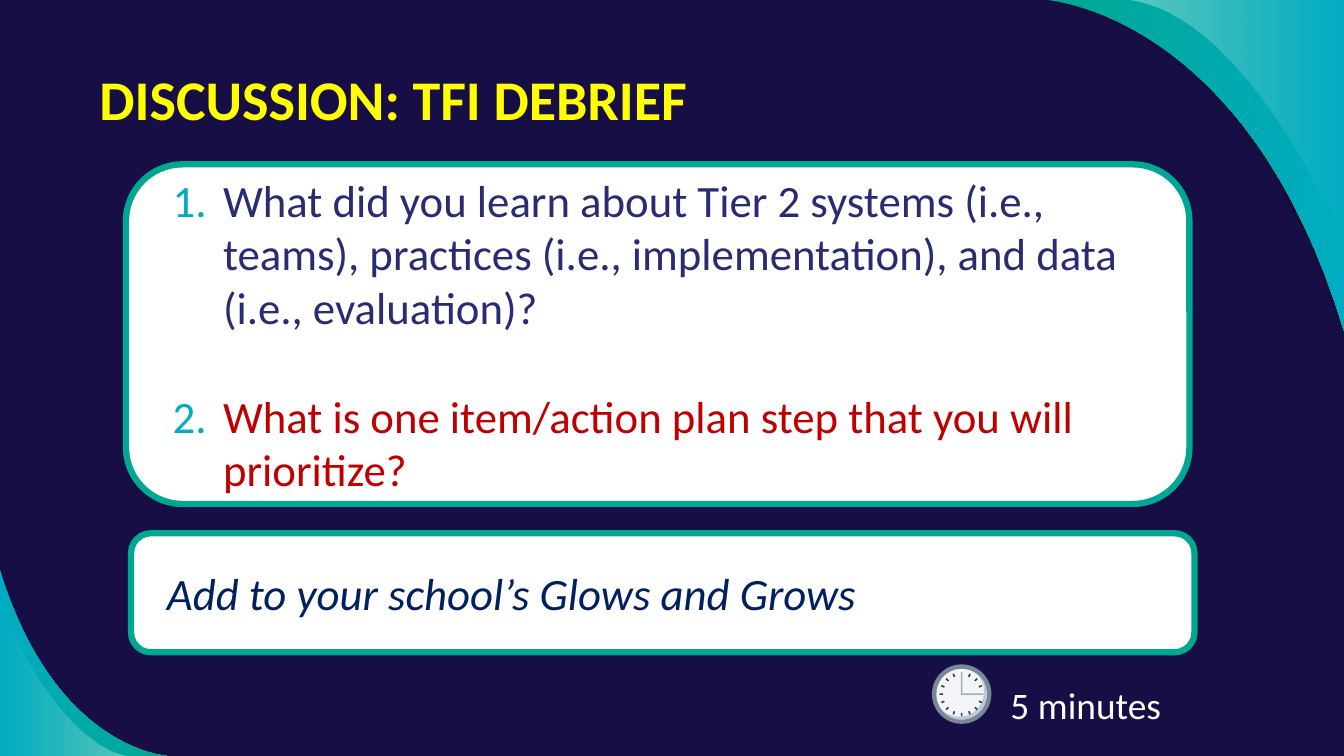
import dataclasses
import math
from typing import Optional

import lxml.etree
import pptx
import pptx.dml.color
import pptx.enum.shapes
import pptx.enum.text
import pptx.oxml
import pptx.oxml.ns
import pptx.util

Pt = pptx.util.Pt
RGBColor = pptx.dml.color.RGBColor
Shapes = pptx.enum.shapes.MSO_SHAPE
Point = tuple[float, float]

NIGHT = RGBColor(0x16, 0x0E, 0x44)
SHADE = RGBColor(0x12, 0x10, 0x2F)
CYAN = RGBColor(0x00, 0xAC, 0xC2)
TEAL = RGBColor(0x00, 0xA7, 0x91)
WHITE = RGBColor(0xFF, 0xFF, 0xFF)
YELLOW = RGBColor(0xFF, 0xFF, 0x00)
INDIGO = RGBColor(0x29, 0x2C, 0x73)
RED = RGBColor(0xC0, 0x00, 0x00)
NAVY = RGBColor(0x00, 0x20, 0x60)
RIM = RGBColor(0x79, 0x88, 0x98)
DIAL = RGBColor(0xF2, 0xF4, 0xF7)
HAND = RGBColor(0xA3, 0xAD, 0xB8)
CRESCENT = RGBColor(0xBC, 0xCA, 0xD6)
TICK = RGBColor(0x3D, 0x3D, 0x3D)

FONT = "Calibri"
WIDTH, HEIGHT = 960, 540
CLOCK_X, CLOCK_Y = 686.9, 495.8
TICK_COUNT, TICK_RADIUS = 16, 14.5


@dataclasses.dataclass
class Stop:
    """A gradient colour with its opacity in percent."""
    color: RGBColor
    opacity: int = 100


@dataclasses.dataclass
class Outline:
    """A closed outline: Bezier curves (two controls, one end), then corners."""
    start: Point
    curves: list[tuple[Point, Point, Point]]
    stops: list[Stop]
    corners: list[Point] = dataclasses.field(default_factory=list)


@dataclasses.dataclass
class Line:
    text: str
    size: float
    color: RGBColor
    bold: bool = False
    italic: bool = False
    numbered: bool = False
    margin: float = 0
    indent: float = 0
    space_after: float = 0
    line_spacing: Optional[float] = None


@dataclasses.dataclass
class Panel:
    left: float
    top: float
    width: float
    height: float
    lines: list[Line]
    inset: Optional[float] = None
    framed: bool = False


FULL_ARC = [Stop(TEAL), Stop(CYAN)]
GLOW_LEFT = [Stop(WHITE, 36), Stop(WHITE, 0)]

CORNERS = [
    Outline((960, 242.6), [((889.2, 7.9), (742.3, 0), (742.3, 0))], [Stop(SHADE, 54)], [(960, 0)]),
    Outline((747.4, 0), [((747.4, 0), (891.4, 7.9), (960, 236.2))], FULL_ARC, [(960, 0)]),
    Outline((960, 175.7), [((960, 175.7), (894.2, 10.8), (805, 0))], GLOW_LEFT, [(960, 0)]),
    Outline((119.5, 540), [((119.5, 540), (38.9, 535.7), (0, 406.8))], FULL_ARC[::-1], [(0, 540)]),
    Outline((0, 432.7), [((0, 432.7), (40.3, 533.5), (95, 540))], GLOW_LEFT[::-1], [(0, 540)]),
]

CLOCK_SHADE = Outline((698.4, 482.4), [
    ((704.9, 489.6), (704.2, 499.7), (697.7, 506.9)),
    ((694.1, 510.5), (689.8, 511.9), (684.7, 511.9)),
    ((681.1, 511.9), (676.8, 510.5), (673.2, 507.6)),
    ((676.8, 511.9), (681.8, 514.1), (686.9, 514.1)),
    ((691.2, 514.1), (696.2, 511.9), (699.8, 508.3)),
    ((707, 501.1), (706.3, 488.9), (698.4, 482.4)),
], [Stop(CRESCENT)])

QUESTIONS = [
    Line("What did you learn about Tier 2 systems (i.e., teams), practices (i.e., implementation), "
         "and data (i.e., evaluation)?", 32, INDIGO,
         numbered=True, margin=50.4, indent=-36, space_after=39),
    Line("What is one item/action plan step that you will prioritize?", 32, RED,
         numbered=True, margin=50.4, indent=-36),
]

PANELS = [
    Panel(64, 36.8, 738.6, 66, [Line("DISCUSSION: TFI DEBRIEF", 40, YELLOW, bold=True)], inset=7.2),
    Panel(690.4, 474.6, 150, 41.8,
          [Line("5 minutes", 26.7, WHITE, margin=22, line_spacing=1.5)], inset=9.4),
    Panel(90, 117.4, 759.6, 242.6, QUESTIONS, framed=True),
    Panel(93.6, 380.9, 759.6, 85,
          [Line("Add to your school’s Glows and Grows", 32, NAVY, italic=True, margin=14.4)],
          framed=True),
]


def add_element(parent, tag: str, **attributes: str):
    return lxml.etree.SubElement(parent, pptx.oxml.ns.qn(tag), attributes)


def add_color(parent, stop: Stop) -> None:
    color = add_element(parent, "a:srgbClr", val=str(stop.color))
    if stop.opacity < 100:
        add_element(color, "a:alpha", val=str(stop.opacity * 1000))


def paint(shape, stops: list[Stop]) -> None:
    """Fill with one colour, or from left to right with several."""
    shape.shadow.inherit = False
    shape.line.fill.background()
    if len(stops) == 1:
        fill = pptx.oxml.parse_xml(f"<a:solidFill {pptx.oxml.ns.nsdecls('a')}/>")
        add_color(fill, stops[0])
    else:
        fill = pptx.oxml.parse_xml(f"<a:gradFill {pptx.oxml.ns.nsdecls('a')}/>")
        stop_list = add_element(fill, "a:gsLst")
        for index, stop in enumerate(stops):
            position = index * 100000 // (len(stops) - 1)
            add_color(add_element(stop_list, "a:gs", pos=str(position)), stop)
        add_element(fill, "a:lin", ang="0", scaled="0")
    shape.line._ln.addprevious(fill)


def curve_points(start: Point, curve: tuple[Point, Point, Point], steps: int = 32) -> list[Point]:
    points = (start, *curve)
    result = []
    for step in range(1, steps + 1):
        t = step / steps
        weights = [math.comb(3, k) * t ** k * (1 - t) ** (3 - k) for k in range(4)]
        result.append((sum(w * p[0] for w, p in zip(weights, points)),
                       sum(w * p[1] for w, p in zip(weights, points))))
    return result


def draw_outline(page, outline: Outline) -> None:
    points = [outline.start]
    for curve in outline.curves:
        points += curve_points(points[-1], curve)
    points = [(Pt(x), Pt(y)) for x, y in points + outline.corners]
    builder = page.shapes.build_freeform(*points[0])
    builder.add_line_segments(points[1:], close=True)
    paint(builder.convert_to_shape(), outline.stops)


def draw_centred(page, kind, x: float, y: float, width: float, height: float,
                 color: RGBColor, angle: float = 0) -> None:
    shape = page.shapes.add_shape(kind, Pt(x - width / 2), Pt(y - height / 2), Pt(width), Pt(height))
    shape.rotation = angle
    paint(shape, [Stop(color)])


def draw_clock(page) -> None:
    for diameter, color in ((42.5, RIM), (36, DIAL)):
        draw_centred(page, Shapes.OVAL, CLOCK_X, CLOCK_Y, diameter, diameter, color)
    draw_centred(page, Shapes.ROUNDED_RECTANGLE, CLOCK_X, CLOCK_Y - 7.6, 1.2, 16, HAND)
    draw_centred(page, Shapes.ROUNDED_RECTANGLE, CLOCK_X + 7.6, CLOCK_Y, 16, 1.2, HAND)
    draw_outline(page, CLOCK_SHADE)
    # The hands cover the marks at twelve and three
    for index in range(TICK_COUNT):
        if index not in (0, TICK_COUNT // 4):
            angle = index * 360 / TICK_COUNT
            x = CLOCK_X + TICK_RADIUS * math.sin(math.radians(angle))
            y = CLOCK_Y - TICK_RADIUS * math.cos(math.radians(angle))
            draw_centred(page, Shapes.ROUNDED_RECTANGLE, x, y, 1.2, 2.4, TICK, angle)


def write_line(para, line: Line) -> None:
    para.text = line.text
    para.alignment = pptx.enum.text.PP_ALIGN.LEFT
    para.space_after = Pt(line.space_after)
    if line.line_spacing:
        para.line_spacing = line.line_spacing
    properties = para._p.get_or_add_pPr()
    properties.set("marL", str(Pt(line.margin)))
    properties.set("indent", str(Pt(line.indent)))
    if line.numbered:
        add_color(add_element(properties, "a:buClr"), Stop(CYAN))
        add_element(properties, "a:buFont", typeface=FONT)
        add_element(properties, "a:buAutoNum", type="arabicPeriod")
    font = para.font
    font.name, font.size, font.color.rgb = FONT, Pt(line.size), line.color
    font.bold, font.italic = line.bold, line.italic


def draw_panel(page, panel: Panel) -> None:
    place = Pt(panel.left), Pt(panel.top), Pt(panel.width), Pt(panel.height)
    if panel.framed:
        box = page.shapes.add_shape(Shapes.ROUNDED_RECTANGLE, *place)
        paint(box, [Stop(WHITE)])
        box.line.color.rgb = TEAL
        box.line.width = Pt(4.5)
    else:
        box = page.shapes.add_textbox(*place)
    frame = box.text_frame
    frame.word_wrap = True
    frame.vertical_anchor = pptx.enum.text.MSO_ANCHOR.MIDDLE
    if panel.inset is not None:
        frame.margin_left = frame.margin_right = Pt(panel.inset)
        frame.margin_top = frame.margin_bottom = Pt(panel.inset)
    for index, line in enumerate(panel.lines):
        write_line(frame.add_paragraph() if index else frame.paragraphs[0], line)


def main() -> None:
    deck = pptx.Presentation()
    deck.slide_width, deck.slide_height = Pt(WIDTH), Pt(HEIGHT)
    page = deck.slides.add_slide(deck.slide_layouts[6])
    page.background.fill.solid()
    page.background.fill.fore_color.rgb = NIGHT
    # Corner sweeps, then text panels, then the clock
    for outline in CORNERS:
        draw_outline(page, outline)
    for panel in PANELS:
        draw_panel(page, panel)
    draw_clock(page)
    deck.save("out.pptx")


if __name__ == "__main__":
    main()
